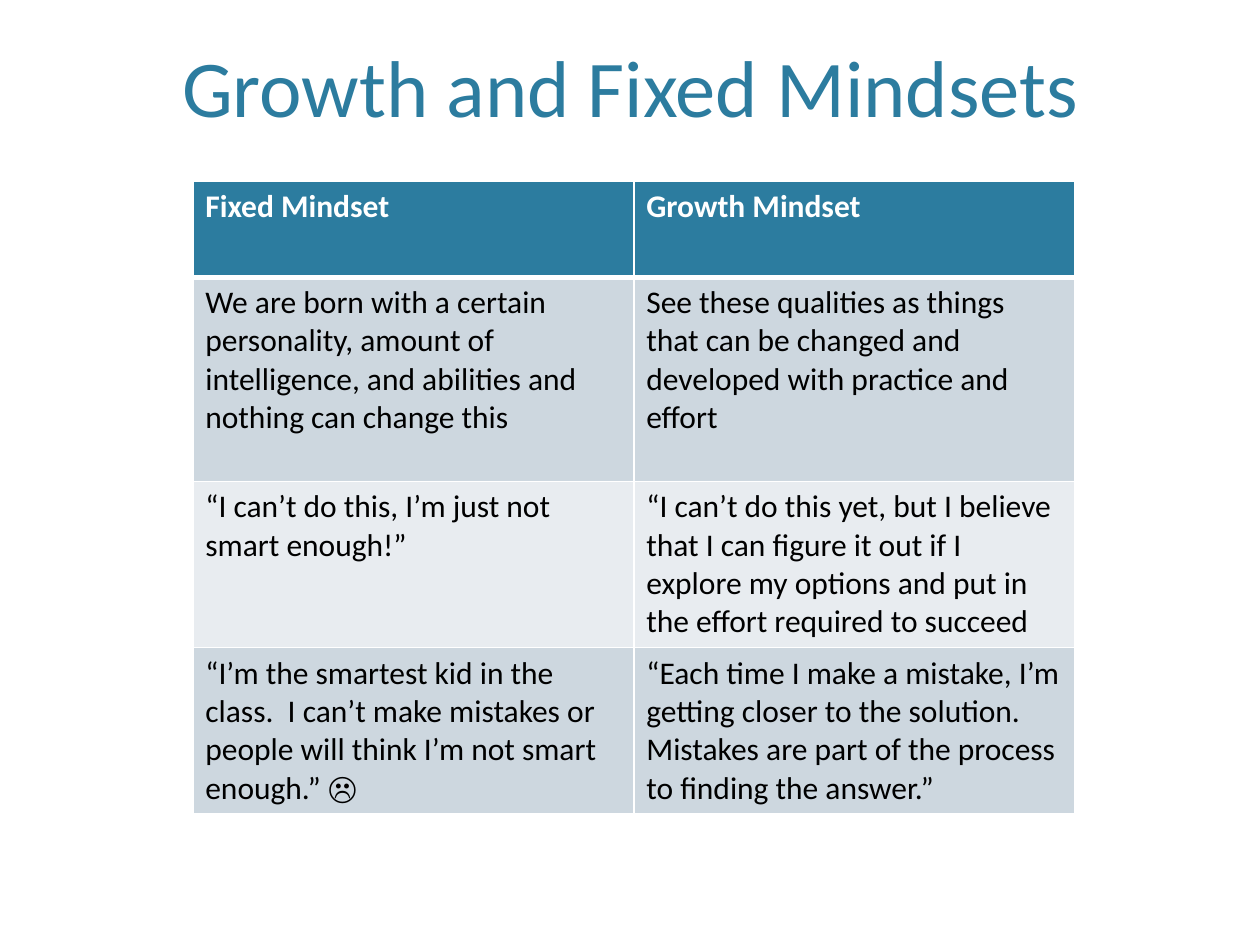
from dataclasses import dataclass

from lxml import etree
from pptx import Presentation
from pptx.dml.color import RGBColor
from pptx.enum.text import MSO_ANCHOR, PP_ALIGN
from pptx.oxml.ns import qn
from pptx.util import Inches, Pt

BOTTOM = MSO_ANCHOR.BOTTOM
TOP = MSO_ANCHOR.TOP
CENTER = PP_ALIGN.CENTER
LEFT = PP_ALIGN.LEFT


@dataclass(frozen=True)
class Theme:
    font: str = "Calibri"
    title_size: int = 46
    body_size: int = 18
    accent: str = "2C7C9F"
    dark_band: str = "CDD7DF"
    light_band: str = "E8ECF0"
    white: str = "FFFFFF"
    black: str = "000000"
    thin_border: int = 1
    header_border: int = 3


@dataclass(frozen=True)
class MindsetRow:
    fixed: str
    growth: str
    height: float


THEME = Theme()
COLUMN_WIDTH = 3.5
ROWS = [
    MindsetRow("Fixed Mindset", "Growth Mindset", 0.76),
    MindsetRow(
        "We are born with a certain personality, amount of intelligence, "
        "and abilities and nothing can change this",
        "See these qualities as things that can be changed and developed "
        "with practice and effort",
        1.62,
    ),
    MindsetRow(
        "“I can’t do this, I’m just not smart enough!”",
        "“I can’t do this yet, but I believe that I can figure it out if I "
        "explore my options and put in the effort required to succeed",
        1.32,
    ),
    MindsetRow(
        "“I’m the smartest kid in the class.  I can’t make mistakes or "
        "people will think I’m not smart enough.” ☹",
        "“Each time I make a mistake, I’m getting closer to the solution.  "
        "Mistakes are part of the process to finding the answer.”",
        1.32,
    ),
]


def write_text(frame, text: str, *, size: int, color: str, bold: bool = False,
               align=LEFT, anchor=TOP) -> None:
    frame.word_wrap = True
    frame.vertical_anchor = anchor
    para = frame.paragraphs[0]
    para.alignment = align
    span = para.add_run()
    span.text = text
    span.font.name = THEME.font
    span.font.size = Pt(size)
    span.font.bold = bold
    span.font.color.rgb = RGBColor.from_string(color)


def set_borders(cell, *, top: int, bottom: int) -> None:
    properties = cell._tc.get_or_add_tcPr()
    widths = {"lnL": THEME.thin_border, "lnR": THEME.thin_border, "lnT": top, "lnB": bottom}
    for position, (side, width) in enumerate(widths.items()):
        line = etree.Element(qn(f"a:{side}"), w=str(Pt(width)))
        fill = etree.SubElement(line, qn("a:solidFill"))
        etree.SubElement(fill, qn("a:srgbClr"), val=THEME.white)
        properties.insert(position, line)


def add_title(page, text: str) -> None:
    title = page.shapes.title
    title.left, title.top = Inches(0.6), Inches(0.18)
    title.width, title.height = Inches(8.8), Inches(0.93)
    write_text(title.text_frame, text, size=THEME.title_size, color=THEME.accent,
               align=CENTER, anchor=BOTTOM)


def add_mindset_table(page, rows: list[MindsetRow]) -> None:
    table = page.shapes.add_table(
        len(rows), 2, Inches(1.53), Inches(1.44), Inches(2 * COLUMN_WIDTH),
        Inches(sum(row.height for row in rows)),
    ).table
    for column in table.columns:
        column.width = Inches(COLUMN_WIDTH)
    for index, row in enumerate(rows):
        table.rows[index].height = Inches(row.height)
        is_header = index == 0
        band = THEME.dark_band if index % 2 else THEME.light_band
        for cell, text in zip(table.rows[index].cells, (row.fixed, row.growth)):
            cell.fill.solid()
            cell.fill.fore_color.rgb = RGBColor.from_string(THEME.accent if is_header else band)
            set_borders(
                cell,
                top=THEME.header_border if index == 1 else THEME.thin_border,
                bottom=THEME.header_border if is_header else THEME.thin_border,
            )
            write_text(cell.text_frame, text, size=THEME.body_size, bold=is_header,
                       color=THEME.white if is_header else THEME.black)


def main() -> None:
    deck = Presentation()
    deck.slide_width, deck.slide_height = Inches(10), Inches(7.5)
    page = deck.slides.add_slide(deck.slide_layouts[5])
    add_title(page, "Growth and Fixed Mindsets")
    add_mindset_table(page, ROWS)
    deck.save("out.pptx")


if __name__ == "__main__":
    main()
